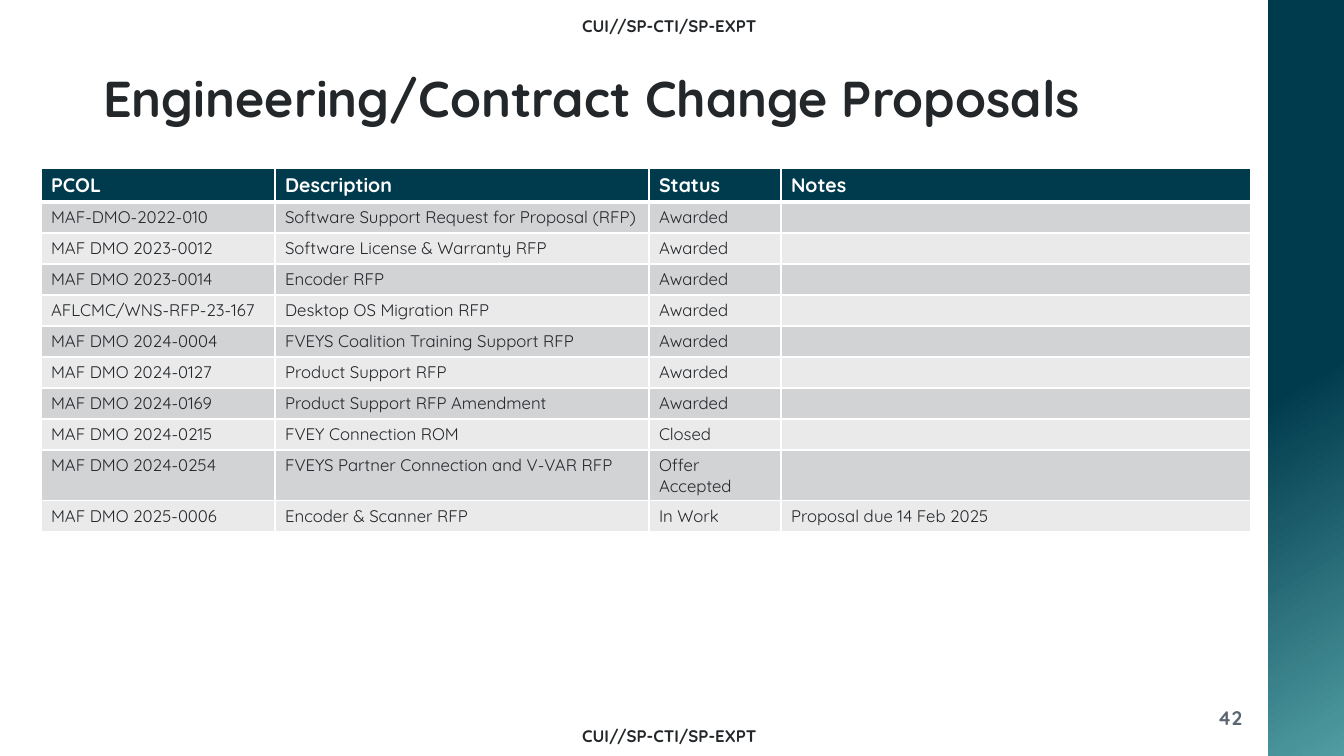
import pptx
import pptx.dml.color
import pptx.enum.shapes
import pptx.enum.text
import pptx.oxml.ns
import pptx.util
from lxml import etree

PX = 914400 / 100.8
FONT = "Quicksand"
INK, WHITE, NAVY, TEAL, SLATE = "24272A", "FFFFFF", "003B4D", "509CA2", "5B6670"
BANDS = ("D2D3D5", "EAEAEB")
ALIGN = pptx.enum.text.PP_ALIGN

MARKING = "CUI//SP-CTI/SP-EXPT"
COLUMN_WIDTHS = (234, 374, 132, 470)
HEADER_HEIGHT, ROW_HEIGHT = 34, 31
HEADINGS = ("PCOL", "Description", "Status", "Notes")
PROPOSALS = (
    ("MAF-DMO-2022-010", "Software Support Request for Proposal (RFP)", "Awarded", ""),
    ("MAF DMO 2023-0012", "Software License & Warranty RFP", "Awarded", ""),
    ("MAF DMO 2023-0014", "Encoder RFP", "Awarded", ""),
    ("AFLCMC/WNS-RFP-23-167", "Desktop OS Migration RFP", "Awarded", ""),
    ("MAF DMO 2024-0004", "FVEYS Coalition Training Support RFP", "Awarded", ""),
    ("MAF DMO 2024-0127", "Product Support RFP", "Awarded", ""),
    ("MAF DMO 2024-0169", "Product Support RFP Amendment", "Awarded", ""),
    ("MAF DMO 2024-0215", "FVEY Connection ROM", "Closed", ""),
    ("MAF DMO 2024-0254", "FVEYS Partner Connection and V-VAR RFP", "Offer Accepted", ""),
    ("MAF DMO 2025-0006", "Encoder & Scanner RFP", "In Work", "Proposal due 14 Feb 2025"),
)


def px(length):
    return pptx.util.Emu(round(length * PX))


def rgb(value):
    return pptx.dml.color.RGBColor.from_string(value)


def write(frame, text, size, color, bold=False, **paragraph_format):
    """Put one formatted line of text in a frame; an empty line keeps its size."""
    paragraph = frame.paragraphs[0]
    for name, value in paragraph_format.items():
        setattr(paragraph, name, value)
    if not text:
        etree.SubElement(paragraph._p, pptx.oxml.ns.qn("a:endParaRPr"), sz=str(size * 100))
        return
    run = paragraph.add_run()
    run.text = text
    font_format = {"name": FONT, "size": pptx.util.Pt(size), "bold": bold}
    for name, value in font_format.items():
        setattr(run.font, name, value)
    run.font.color.rgb = rgb(color)


def add_label(slide, box, text, size, color, alignment):
    frame = slide.shapes.add_textbox(*map(px, box)).text_frame
    frame.word_wrap = True
    write(frame, text, size, color, bold=True, alignment=alignment)


def add_side_band(slide):
    band = slide.shapes.add_shape(
        pptx.enum.shapes.MSO_SHAPE.RECTANGLE, *map(px, (1268, 0, 76, 756)))
    band.shadow.inherit = False
    band.line.fill.background()
    band.fill.gradient()
    band.fill.gradient_angle = 300
    for stop, (position, color) in zip(band.fill.gradient_stops, ((0.5, NAVY), (1, TEAL))):
        stop.position = position
        stop.color.rgb = rgb(color)


def set_title(slide, text):
    title = slide.shapes.title
    box = {"left": 93, "top": 37, "width": 1159, "height": 97}
    for name, value in box.items():
        setattr(title, name, px(value))
    title.text_frame.vertical_anchor = pptx.enum.text.MSO_ANCHOR.BOTTOM
    write(title.text_frame, text, 36, INK, bold=True,
          alignment=ALIGN.LEFT, line_spacing=0.9)


def set_borders(cell, widths):
    """Draw white cell borders, given the width in points of each side."""
    properties = cell._tc.get_or_add_tcPr()
    for side, width in widths.items():
        line = etree.SubElement(properties, pptx.oxml.ns.qn(f"a:ln{side}"),
                                w=str(pptx.util.Pt(width)))
        fill = etree.SubElement(line, pptx.oxml.ns.qn("a:solidFill"))
        etree.SubElement(fill, pptx.oxml.ns.qn("a:srgbClr"), val=WHITE)


def add_proposals(slide):
    rows = (HEADINGS, *PROPOSALS)
    height = HEADER_HEIGHT + ROW_HEIGHT * len(PROPOSALS)
    table = slide.shapes.add_table(
        len(rows), len(HEADINGS),
        *map(px, (41, 168, sum(COLUMN_WIDTHS), height))).table
    for column, width in zip(table.columns, COLUMN_WIDTHS):
        column.width = px(width)
    for index, texts in enumerate(rows):
        header = index == 0
        table.rows[index].height = px(HEADER_HEIGHT if header else ROW_HEIGHT)
        fill = NAVY if header else BANDS[(index - 1) % 2]
        size, color = (14, WHITE) if header else (12, INK)
        borders = {"L": 1, "R": 1, "T": 3 if index == 1 else 1, "B": 3 if header else 1}
        for cell, text in zip(table.rows[index].cells, texts):
            set_borders(cell, borders)
            cell.fill.solid()
            cell.fill.fore_color.rgb = rgb(fill)
            write(cell.text_frame, text, size, color, bold=header)


def main():
    presentation = pptx.Presentation()
    presentation.slide_width, presentation.slide_height = px(1344), px(756)
    slide = presentation.slides.add_slide(presentation.slide_layouts[5])
    add_side_band(slide)
    for top in (11, 721):
        add_label(slide, (199, top, 941, 24), MARKING, 12, INK, ALIGN.CENTER)
    add_label(slide, (1159, 701, 93, 40), "42", 14, SLATE, ALIGN.RIGHT)
    set_title(slide, "Engineering/Contract Change Proposals")
    add_proposals(slide)
    presentation.save("out.pptx")


if __name__ == "__main__":
    main()
